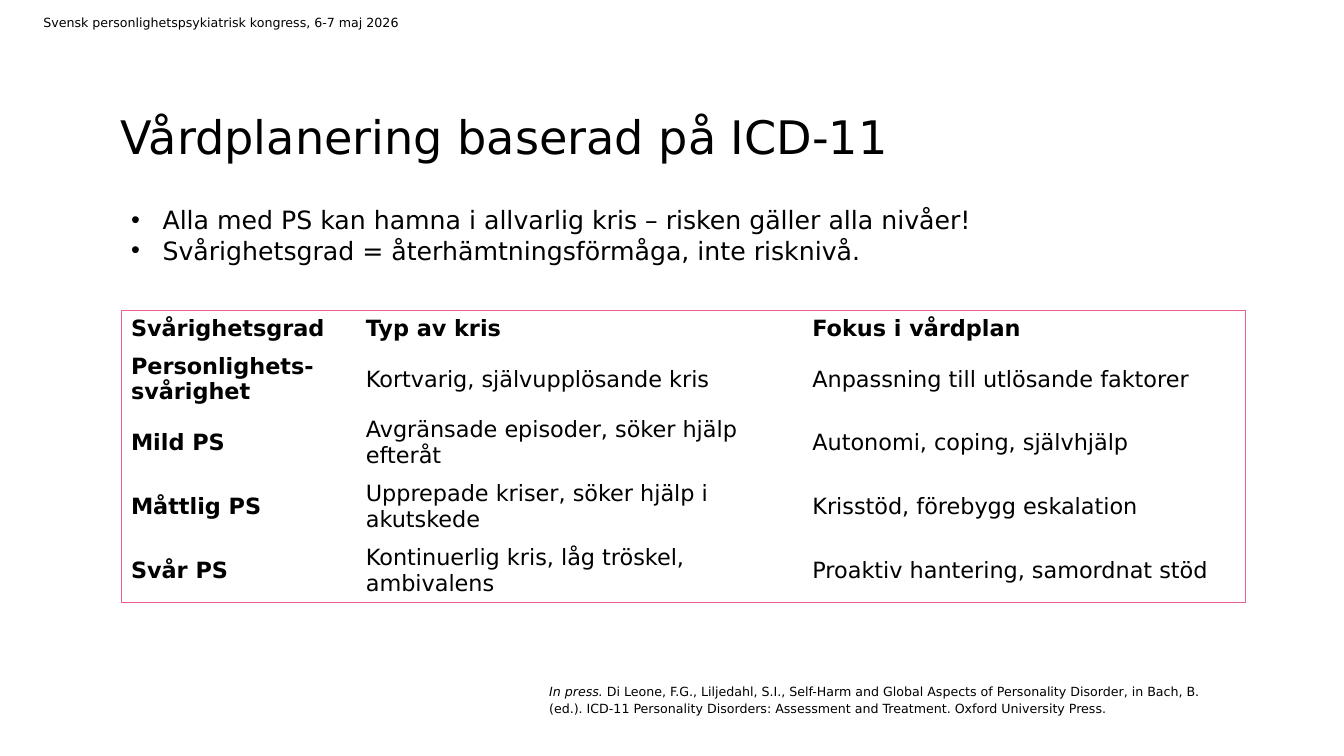
from lxml.etree import SubElement
from pptx import Presentation
from pptx.dml.color import RGBColor
from pptx.enum.text import MSO_ANCHOR as Anchor, MSO_AUTO_SIZE as AutoSize, PP_ALIGN as Align
from pptx.oxml.ns import qn
from pptx.util import Pt

COLORS = {"text": "000000", "border": "ED5F8C"}
FONT = "DejaVu Sans"


def style_runs(paragraph, size, bold=False):
    for span in paragraph.runs:
        span.font.name = FONT
        span.font.size = Pt(size)
        span.font.bold = bold
        span.font.color.rgb = RGBColor.from_string(COLORS["text"])


def place(box, left, top, width, height, anchor, inset=True):
    box.left, box.top, box.width, box.height = Pt(left), Pt(top), Pt(width), Pt(height)
    frame = box.text_frame
    frame.word_wrap = True
    frame.auto_size = AutoSize.NONE
    frame.vertical_anchor = anchor
    if not inset:
        frame.margin_left = frame.margin_right = frame.margin_top = frame.margin_bottom = 0
    return frame


deck = Presentation()
deck.slide_width, deck.slide_height = Pt(960), Pt(540)
page = deck.slides.add_slide(deck.slide_layouts[1])

# Title
title = place(page.shapes.title, 86.4, 33.84, 680.4, 82.8, Anchor.BOTTOM, inset=False)
title.text = "Vårdplanering baserad på ICD-11"
title.paragraphs[0].alignment = Align.LEFT
style_runs(title.paragraphs[0], 33)

# Bullet list
bullets = place(page.placeholders[1], 86.4, 142.56, 802.8, 51.12, Anchor.TOP)
bullets.text = (
    "Alla med PS kan hamna i allvarlig kris – risken gäller alla nivåer!\n"
    "Svårighetsgrad = återhämtningsförmåga, inte risknivå."
)
for para in bullets.paragraphs:
    properties = para._p.get_or_add_pPr()
    properties.set("marL", str(Pt(22.5)))
    properties.set("indent", str(Pt(-22.5)))
    SubElement(properties, qn("a:buFont"), typeface="Arial")
    SubElement(properties, qn("a:buChar"), char="•")
    para.space_before = Pt(0)
    para.line_spacing = 1.0
    style_runs(para, 18)

# Care plan table
rows = [
    ("Svårighetsgrad", "Typ av kris", "Fokus i vårdplan"),
    ("Personlighets-svårighet", "Kortvarig, självupplösande kris", "Anpassning till utlösande faktorer"),
    ("Mild PS", "Avgränsade episoder, söker hjälp efteråt", "Autonomi, coping, självhjälp"),
    ("Måttlig PS", "Upprepade kriser, söker hjälp i akutskede", "Krisstöd, förebygg eskalation"),
    ("Svår PS", "Kontinuerlig kris, låg tröskel, ambivalens", "Proaktiv hantering, samordnat stöd"),
]
widths = [167.76, 318.96, 316.08]
heights = [26.4] + [45.6] * 4
table = page.shapes.add_table(
    len(rows), len(widths), Pt(86.4), Pt(221.76), Pt(sum(widths)), Pt(sum(heights))
).table
table.first_row = table.horz_banding = False
for column, width in zip(table.columns, widths):
    column.width = Pt(width)
for row, height in zip(table.rows, heights):
    row.height = Pt(height)

for r, texts in enumerate(rows):
    for c, text in enumerate(texts):
        cell = table.cell(r, c)
        cell.text = text
        cell.vertical_anchor = Anchor.MIDDLE
        style_runs(cell.text_frame.paragraphs[0], 16, bold=r == 0 or c == 0)
        # Only the outer edge of the table is drawn
        edges = {
            "lnL": c == 0,
            "lnR": c == len(widths) - 1,
            "lnT": r == 0,
            "lnB": r == len(rows) - 1,
        }
        for edge, drawn in edges.items():
            line = SubElement(cell._tc.get_or_add_tcPr(), qn(f"a:{edge}"), w=str(Pt(0.5)))
            if drawn:
                fill = SubElement(line, qn("a:solidFill"))
                SubElement(fill, qn("a:srgbClr"), val=COLORS["border"])
            else:
                SubElement(line, qn("a:noFill"))
        cell.fill.background()

# Reference
reference = place(page.shapes.add_textbox(0, 0, 0, 0), 385.2, 484.56, 480.24, 30.24, Anchor.TOP)
para = reference.paragraphs[0]
para.line_spacing = 1.07
para.space_after = Pt(8)
for text, italic in [
    ("In press. ", True),
    ("Di Leone, F.G., Liljedahl, S.I., Self-Harm and Global Aspects of Personality Disorder, in Bach, B. "
     "(ed.). ICD-11 Personality Disorders: Assessment and Treatment. Oxford University Press.", False),
]:
    span = para.add_run()
    span.text = text
    span.font.italic = italic
style_runs(para, 9)

# Congress name
congress = place(page.shapes.add_textbox(0, 0, 0, 0), 30.96, 10.8, 324.72, 10.8, Anchor.MIDDLE, inset=False)
congress.text = "Svensk personlighetspsykiatrisk kongress, 6-7 maj 2026"
style_runs(congress.paragraphs[0], 9)

deck.save("out.pptx")
